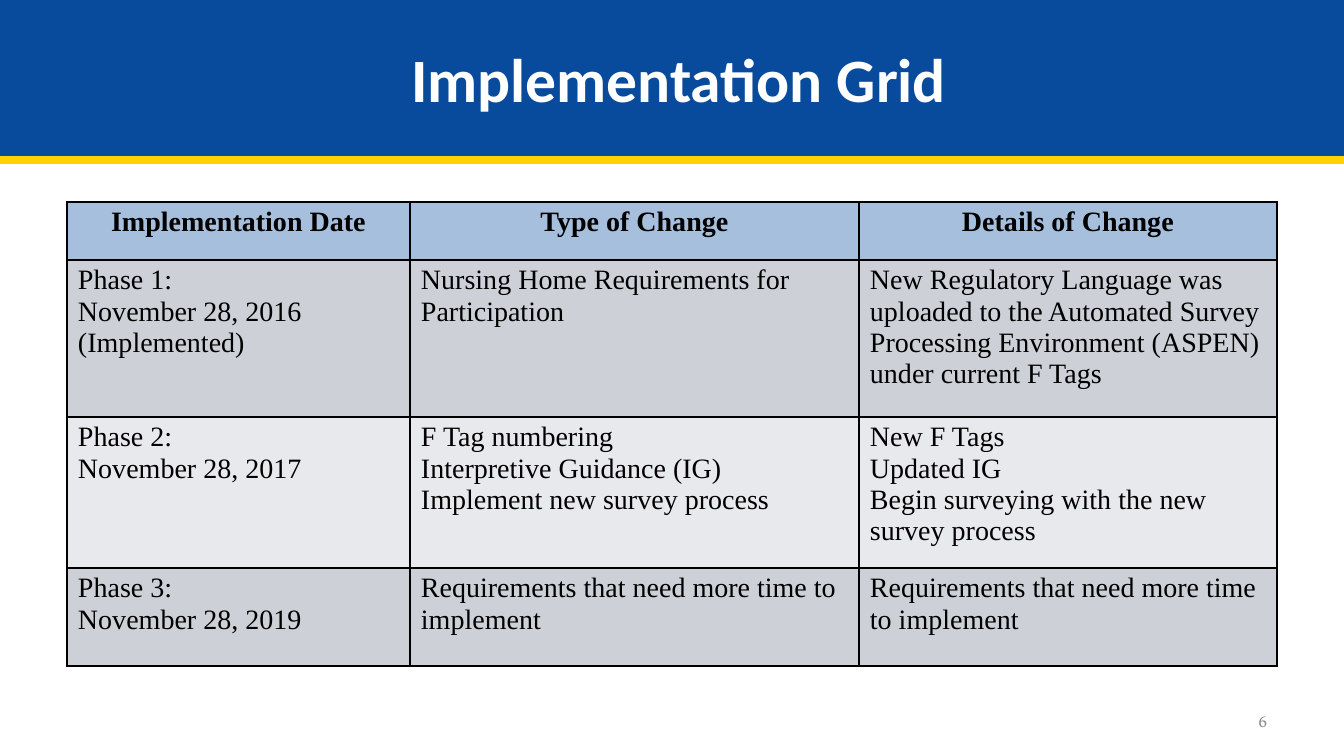
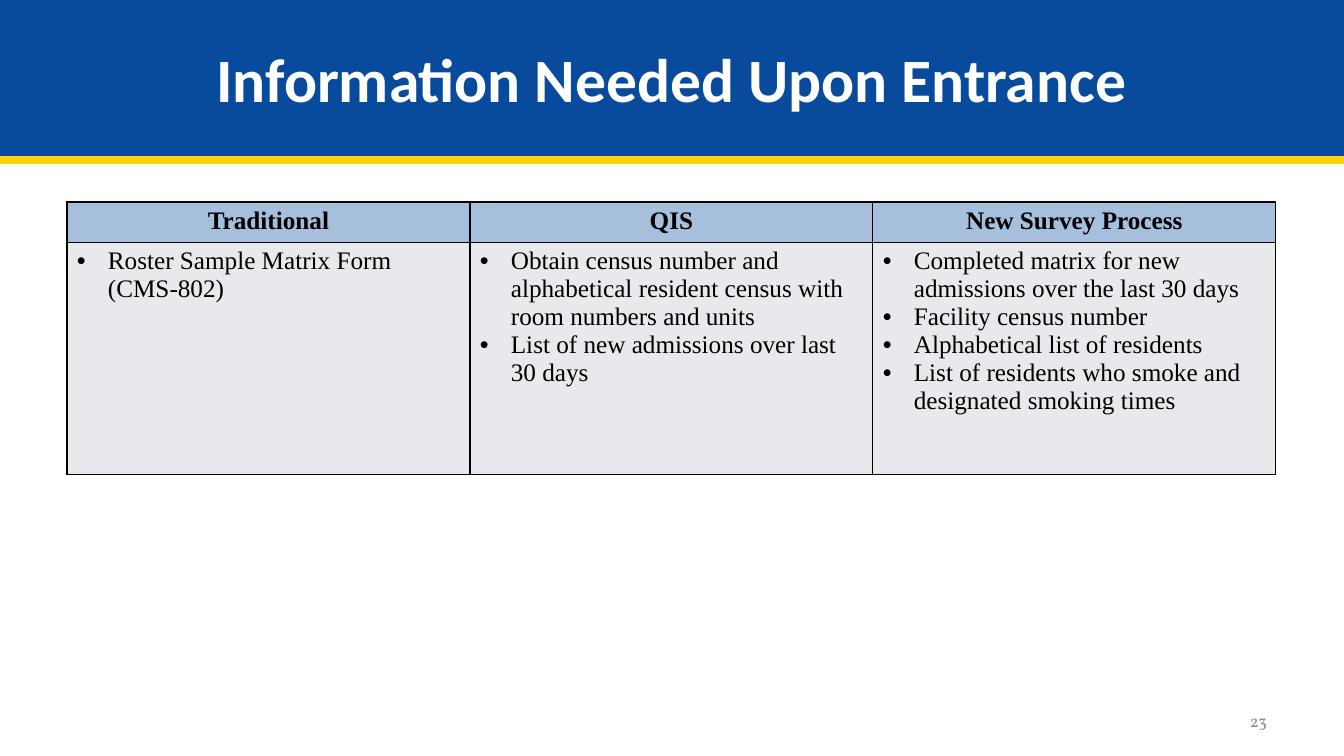
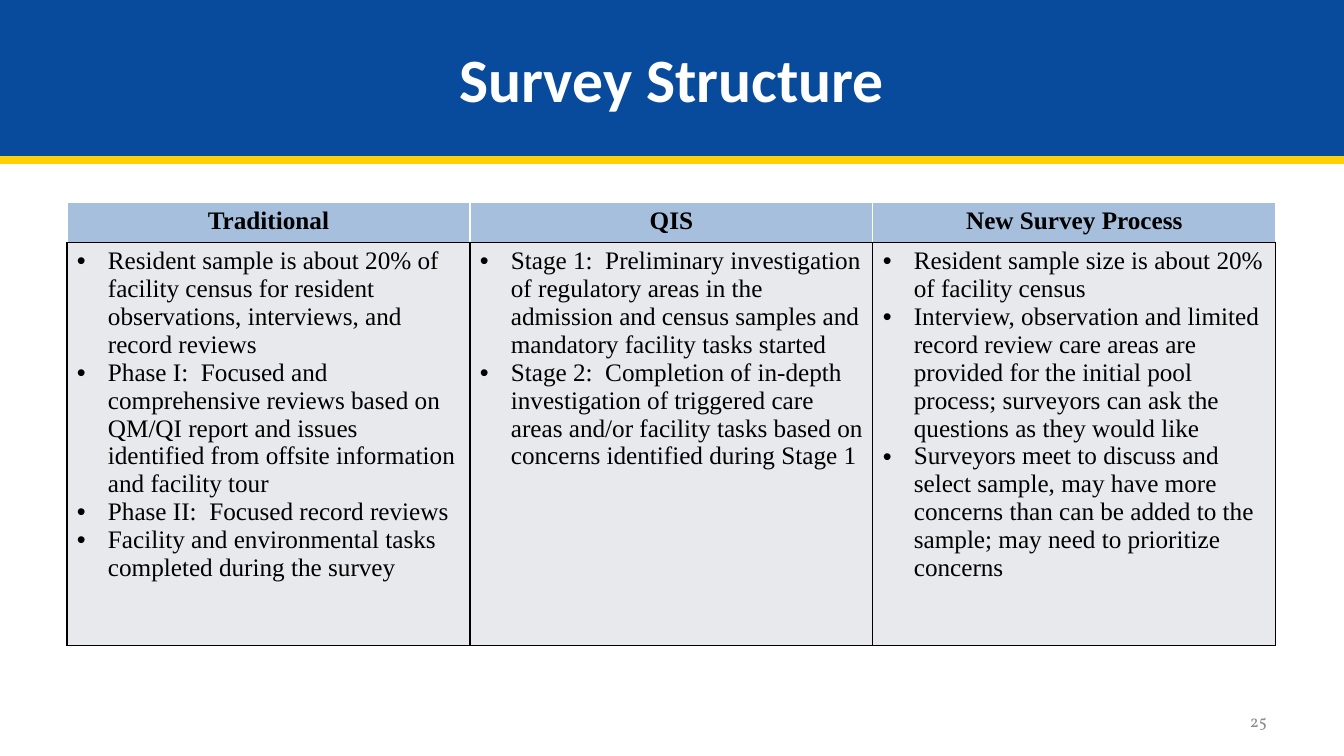
from lxml import etree
from pptx import Presentation
from pptx.dml.color import RGBColor
from pptx.enum.shapes import MSO_SHAPE
from pptx.enum.text import MSO_ANCHOR, PP_ALIGN
from pptx.oxml.ns import qn
from pptx.util import Pt

PX = 12192000 / 1344  # EMU in one px
RECTANGLE = MSO_SHAPE.RECTANGLE
MIDDLE = MSO_ANCHOR.MIDDLE
LEFT, CENTER, RIGHT = PP_ALIGN.LEFT, PP_ALIGN.CENTER, PP_ALIGN.RIGHT

BLUE = RGBColor(0x08, 0x4A, 0x9C)
YELLOW = RGBColor(0xFF, 0xD0, 0x04)
HEADER_BLUE = RGBColor(0xA6, 0xBF, 0xDD)
DARK_ROW = RGBColor(0xCD, 0xD1, 0xD7)
LIGHT_ROW = RGBColor(0xE8, 0xE9, 0xEC)
GRAY = RGBColor(0x8C, 0x8C, 0x8C)
BLACK = RGBColor(0, 0, 0)
WHITE = RGBColor(0xFF, 0xFF, 0xFF)

TITLE_FONT = {"name": "Calibri", "size": Pt(44), "bold": True}
NUMBER_FONT = {"name": "Vollkorn", "size": Pt(12), "bold": False}
TABLE_FONT = "Times New Roman"

SLIDE_W, SLIDE_H = 1344, 756
BAND_H, STRIPE_H = 156, 8
TABLE_X, TABLE_Y = 67, 202
BULLET_INDENT = 31
SURVEY_HEADER = ["Traditional", "QIS", "New Survey Process"]

# Content: each cell is a list of paragraphs
SLIDES = [
    {
        "title": " Implementation Grid", "number": "6",
        "columns": [343, 449, 418], "rows": [58, 157, 151, 98],
        "size": 20, "margin": 11, "bullets": False, "header_border": BLACK,
        "fills": [DARK_ROW, LIGHT_ROW, DARK_ROW],
        "header": ["Implementation Date", "Type of Change", "Details of Change"],
        "body": [
            [["Phase 1:", "November 28, 2016", "(Implemented)"],
             ["Nursing Home Requirements for Participation"],
             ["New Regulatory Language was uploaded to the Automated Survey "
              "Processing Environment (ASPEN) under current F Tags"]],
            [["Phase 2:", "November 28, 2017"],
             ["F Tag numbering", "Interpretive Guidance (IG)",
              "Implement new survey process"],
             ["New F Tags", "Updated IG",
              "Begin surveying with the new survey process"]],
            [["Phase 3:", "November 28, 2019"],
             ["Requirements that need more time to implement"],
             ["Requirements that need more time to implement"]],
        ],
    },
    {
        "title": "Information Needed Upon Entrance", "number": "23",
        "columns": [403] * 3, "rows": [40, 232],
        "size": 18, "margin": 10, "bullets": True, "header_border": BLACK,
        "fills": [LIGHT_ROW],
        "header": SURVEY_HEADER,
        "body": [
            [["Roster Sample Matrix Form (CMS-802)"],
             ["Obtain census number and alphabetical resident census with "
              "room numbers and units",
              "List of new admissions over last 30 days"],
             ["Completed matrix for new admissions over the last 30 days",
              "Facility census number",
              "Alphabetical list of residents",
              "List of residents who smoke and designated smoking times"]],
        ],
    },
    {
        "title": "Survey Structure", "number": "25",
        "columns": [403] * 3, "rows": [40, 403],
        "size": 18, "margin": 10, "bullets": True, "header_border": WHITE,
        "fills": [LIGHT_ROW],
        "header": SURVEY_HEADER,
        "body": [
            [["Resident sample is about 20% of facility census for resident "
              "observations, interviews, and record reviews",
              "Phase I:  Focused and comprehensive reviews based on QM/QI "
              "report and issues identified from offsite information and "
              "facility tour",
              "Phase II:  Focused record reviews",
              "Facility and environmental tasks completed during the survey"],
             ["Stage 1:  Preliminary investigation of regulatory areas in the "
              "admission and census samples and mandatory facility tasks "
              "started",
              "Stage 2:  Completion of in-depth investigation of triggered "
              "care areas and/or facility tasks based on concerns identified "
              "during Stage 1"],
             ["Resident sample size is about 20% of facility census",
              "Interview, observation and limited record review care areas "
              "are provided for the initial pool process; surveyors can ask "
              "the questions as they would like",
              "Surveyors meet to discuss and select sample, may have more "
              "concerns than can be added to the sample; may need to "
              "prioritize concerns"]],
        ],
    },
]


def px(*lengths):
    return [round(length * PX) for length in lengths]


def write(frame, lines, font, color, align, bullets=False):
    for index, line in enumerate(lines):
        paragraph = frame.add_paragraph() if index else frame.paragraphs[0]
        paragraph.alignment = align
        if bullets:
            properties = paragraph._p.get_or_add_pPr()
            indent, = px(BULLET_INDENT)
            properties.set("marL", str(indent))
            properties.set("indent", str(-indent))
            etree.SubElement(properties, qn("a:buFont"), typeface="Arial")
            etree.SubElement(properties, qn("a:buChar"), char="•")
        run = paragraph.add_run()
        run.text = line
        for name, value in font.items():
            setattr(run.font, name, value)
        run.font.color.rgb = color


prs = Presentation()
prs.slide_width, prs.slide_height = px(SLIDE_W, SLIDE_H)
blank = prs.slide_layouts[6]

for content in SLIDES:
    slide = prs.slides.add_slide(blank)

    # Title band with the yellow stripe under it
    for top, height, color in ((BAND_H, STRIPE_H, YELLOW), (0, BAND_H, BLUE)):
        band = slide.shapes.add_shape(RECTANGLE, *px(0, top, SLIDE_W, height))
        band.shadow.inherit = False
        band.fill.solid()
        band.fill.fore_color.rgb = color
        band.line.fill.background()
    title = band.text_frame
    title.word_wrap = True
    title.vertical_anchor = MIDDLE
    write(title, [content["title"]], TITLE_FONT, WHITE, CENTER)

    # Table
    columns, rows = content["columns"], content["rows"]
    table = slide.shapes.add_table(
        len(rows), len(columns),
        *px(TABLE_X, TABLE_Y, sum(columns), sum(rows))).table
    table.horz_banding = False
    for column, width in zip(table.columns, px(*columns)):
        column.width = width
    for row, height in zip(table.rows, px(*rows)):
        row.height = height

    grid = [[[label] for label in content["header"]]] + content["body"]
    fills = [HEADER_BLUE] + content["fills"]
    for row_index, (row, fill) in enumerate(zip(grid, fills)):
        is_header = row_index == 0
        font = {"name": TABLE_FONT, "size": Pt(content["size"]), "bold": is_header}
        border = content["header_border"] if is_header else BLACK
        borders = {"lnL": border, "lnR": border, "lnT": border, "lnB": BLACK}
        for column_index, lines in enumerate(row):
            cell = table.cell(row_index, column_index)
            cell.margin_left, cell.margin_right = px(content["margin"]) * 2
            cell.margin_top, cell.margin_bottom = px(5, 5)
            properties = cell._tc.get_or_add_tcPr()
            for side, color in borders.items():
                line = etree.SubElement(properties, qn("a:" + side), w=str(Pt(1)))
                solid = etree.SubElement(line, qn("a:solidFill"))
                etree.SubElement(solid, qn("a:srgbClr"), val=str(color))
            cell.fill.solid()
            cell.fill.fore_color.rgb = fill
            write(cell.text_frame, lines, font, BLACK,
                  CENTER if is_header else LEFT,
                  content["bullets"] and not is_header)

    # Slide number
    number = slide.shapes.add_textbox(*px(964, 701, 313, 40)).text_frame
    number.word_wrap = True
    number.vertical_anchor = MIDDLE
    write(number, [content["number"]], NUMBER_FONT, GRAY, RIGHT)

prs.save("out.pptx")
